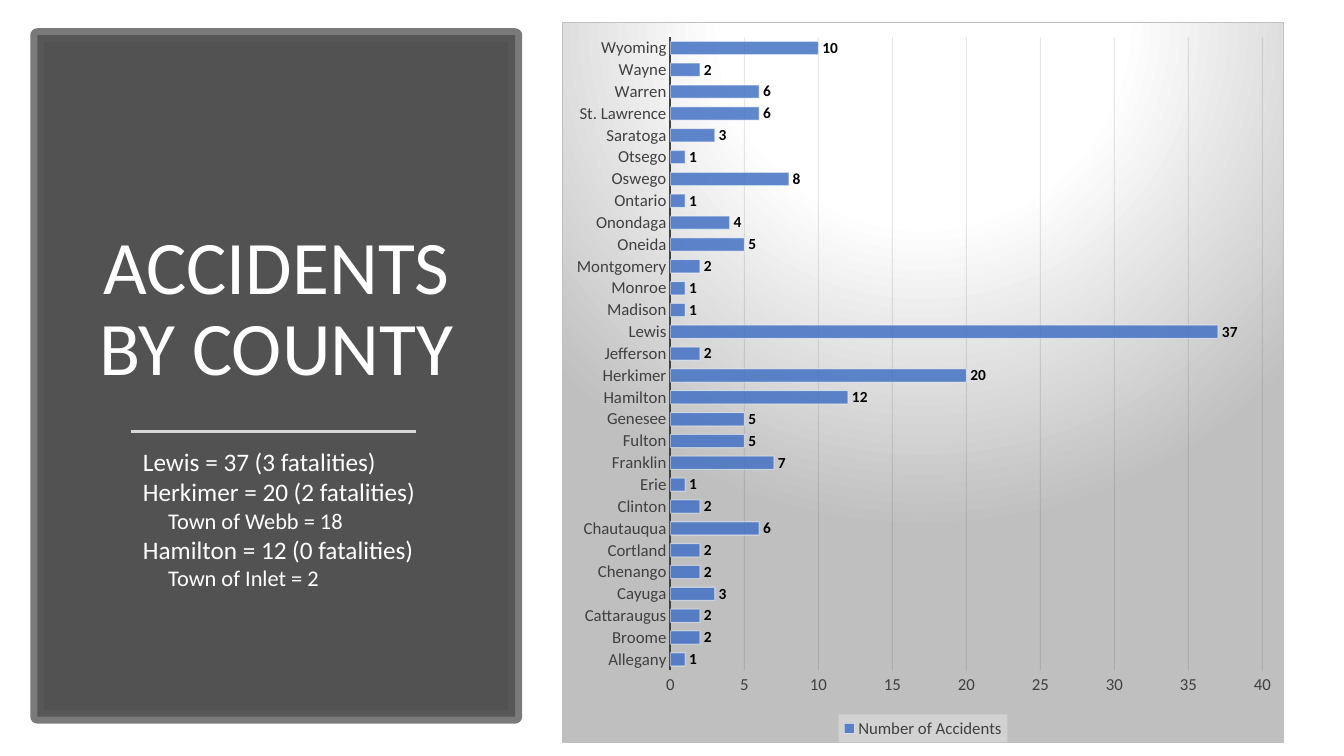
"""Build the slide of accidents by county."""
from dataclasses import dataclass
from typing import Any

from lxml import etree
from pptx import Presentation
from pptx.chart.chart import Chart
from pptx.chart.data import CategoryChartData
from pptx.dml.color import RGBColor
from pptx.enum.chart import XL_CHART_TYPE, XL_LABEL_POSITION, XL_LEGEND_POSITION, XL_TICK_MARK
from pptx.enum.shapes import MSO_CONNECTOR, MSO_SHAPE
from pptx.enum.text import MSO_ANCHOR, PP_ALIGN
from pptx.oxml import parse_xml
from pptx.oxml.ns import nsdecls, qn
from pptx.slide import Slide
from pptx.util import Inches, Pt

BAR_CLUSTERED = XL_CHART_TYPE.BAR_CLUSTERED
OUTSIDE_END = XL_LABEL_POSITION.OUTSIDE_END
LEGEND_BOTTOM = XL_LEGEND_POSITION.BOTTOM
NO_TICK = XL_TICK_MARK.NONE
STRAIGHT = MSO_CONNECTOR.STRAIGHT
RECTANGLE = MSO_SHAPE.RECTANGLE
TOP, BOTTOM = MSO_ANCHOR.TOP, MSO_ANCHOR.BOTTOM
LEFT, CENTER = PP_ALIGN.LEFT, PP_ALIGN.CENTER

WHITE = RGBColor(0xFF, 0xFF, 0xFF)
BLACK = RGBColor(0x00, 0x00, 0x00)
CHARCOAL = RGBColor(0x40, 0x40, 0x40)
PANEL_EDGE = RGBColor(0x59, 0x59, 0x59)
RULE_GRAY = RGBColor(0xD9, 0xD9, 0xD9)
GRID_BLACK = RGBColor(0x0D, 0x0D, 0x0D)
BAR_BLUE = RGBColor(0x44, 0x72, 0xC4)
FONT = "Calibri"

ACCIDENTS = {
    "Allegany": 1, "Broome": 2, "Cattaraugus": 2, "Cayuga": 3, "Chenango": 2,
    "Cortland": 2, "Chautauqua": 6, "Clinton": 2, "Erie": 1, "Franklin": 7,
    "Fulton": 5, "Genesee": 5, "Hamilton": 12, "Herkimer": 20, "Jefferson": 2,
    "Lewis": 37, "Madison": 1, "Monroe": 1, "Montgomery": 2, "Oneida": 5,
    "Onondaga": 4, "Ontario": 1, "Oswego": 8, "Otsego": 1, "Saratoga": 3,
    "St. Lawrence": 6, "Warren": 6, "Wayne": 2, "Wyoming": 10,
}

CHART_BACKGROUND = f"""<c:spPr {nsdecls("c", "a")}>
<a:gradFill><a:gsLst>
<a:gs pos="0"><a:srgbClr val="FFFFFF"/></a:gs>
<a:gs pos="39000"><a:srgbClr val="FFFFFF"/></a:gs>
<a:gs pos="100000"><a:srgbClr val="BFBFBF"/></a:gs>
</a:gsLst><a:path path="circle">
<a:fillToRect l="50000" t="-80000" r="50000" b="180000"/></a:path></a:gradFill>
<a:ln w="9525"><a:solidFill><a:srgbClr val="BFBFBF"/></a:solidFill></a:ln></c:spPr>"""
LEGEND_BACKGROUND = f"""<c:spPr {nsdecls("c", "a")}><a:solidFill>
<a:srgbClr val="F2F2F2"><a:alpha val="39000"/></a:srgbClr></a:solidFill></c:spPr>"""
PLOT_LAYOUT = f"""<c:layout {nsdecls("c")}><c:manualLayout>
<c:layoutTarget val="inner"/><c:xMode val="edge"/><c:yMode val="edge"/>
<c:x val="0.15"/><c:y val="0.02"/><c:w val="0.82"/><c:h val="0.88"/>
</c:manualLayout></c:layout>"""


@dataclass(frozen=True)
class Line:
    text: str
    size: float
    indent: float = 0


@dataclass(frozen=True)
class TextBlock:
    box: tuple[float, float, float, float]
    lines: tuple[Line, ...]
    anchor: MSO_ANCHOR
    alignment: PP_ALIGN
    spacing: float


TEXT_BLOCKS = (
    TextBlock((0.74, 1.63, 4, 2.31), (Line("ACCIDENTS BY COUNTY", 54),), BOTTOM, CENTER, 0.9),
    TextBlock((1.32, 4.38, 2.94, 1.58), (
        Line("Lewis = 37 (3 fatalities)", 18),
        Line("Herkimer = 20 (2 fatalities)", 18),
        Line("Town of Webb = 18", 16, 0.25),
        Line("Hamilton = 12 (0 fatalities)", 18),
        Line("Town of Inlet = 2", 16, 0.25),
    ), TOP, LEFT, 1.0),
)


def apply_format(target: Any, values: dict[str, Any]) -> None:
    """Set each named attribute on the target."""
    for name, value in values.items():
        setattr(target, name, value)


def set_font(font: Any, size: float, color: RGBColor, bold: bool = False) -> None:
    """Set the typeface, size, weight and colour of a font."""
    apply_format(font, {"name": FONT, "size": Pt(size), "bold": bold})
    font.color.rgb = color


def set_line(line: Any, color: RGBColor, width: float) -> None:
    """Give a line a solid colour and a width in points."""
    line.color.rgb = color
    line.width = Pt(width)


def set_opacity(element: Any, path: str, percent: int) -> None:
    """Make the colours found under the path partly transparent."""
    for color in element.xpath(f"{path}/a:solidFill/a:srgbClr"):
        etree.SubElement(color, qn("a:alpha")).set("val", str(percent * 1000))


def add_panel(slide: Slide) -> None:
    """Draw the dark panel and the rule that divides its text."""
    panel = slide.shapes.add_shape(RECTANGLE, *map(Inches, (0.37, 0.35, 4.74, 6.76)))
    panel.shadow.inherit = False
    panel.fill.solid()
    panel.fill.fore_color.rgb = CHARCOAL
    set_line(panel.line, PANEL_EDGE, 10)
    set_opacity(panel.element, "p:spPr", 90)
    set_opacity(panel.element, "p:spPr/a:ln", 80)
    rule = slide.shapes.add_connector(STRAIGHT, *map(Inches, (1.3, 4.28, 4.13, 4.28)))
    set_line(rule.line, RULE_GRAY, 1.75)
    etree.SubElement(rule.element.spPr, qn("a:effectLst"))


def add_text(slide: Slide, block: TextBlock) -> None:
    """Add a text box with one paragraph for each line."""
    shape = slide.shapes.add_textbox(*map(Inches, block.box))
    frame = shape.text_frame
    apply_format(frame, {"word_wrap": True, "vertical_anchor": block.anchor})
    frame.text = "\n".join(line.text for line in block.lines)
    elements = shape.element.xpath(".//a:p")
    for paragraph, element, line in zip(frame.paragraphs, elements, block.lines):
        apply_format(paragraph, {"alignment": block.alignment, "line_spacing": block.spacing})
        set_font(paragraph.runs[0].font, line.size, WHITE)
        if line.indent:
            element.get_or_add_pPr().set("marL", str(Inches(line.indent)))


def style_axes(chart: Chart) -> None:
    """Format both axes and the gridlines."""
    category_axis, value_axis = chart.category_axis, chart.value_axis
    for axis in (category_axis, value_axis):
        apply_format(axis, {"major_tick_mark": NO_TICK, "minor_tick_mark": NO_TICK})
        set_font(axis.tick_labels.font, 12, CHARCOAL)
    set_line(category_axis.format.line, CHARCOAL, 1.5)
    apply_format(value_axis, {"minimum_scale": 0, "maximum_scale": 40, "major_unit": 5})
    value_axis.format.line.fill.background()
    set_line(value_axis.major_gridlines.format.line, GRID_BLACK, 0.75)
    set_opacity(chart.element, ".//c:majorGridlines//a:ln", 10)


def style_bars(chart: Chart) -> None:
    """Format the bars and their value labels."""
    plot = chart.plots[0]
    apply_format(plot, {"gap_width": 65, "vary_by_categories": False})
    series = plot.series[0]
    series.format.fill.solid()
    series.format.fill.fore_color.rgb = BAR_BLUE
    set_line(series.format.line, WHITE, 0.75)
    set_opacity(chart.element, ".//c:ser/c:spPr", 85)
    set_opacity(chart.element, ".//c:ser/c:spPr/a:ln", 50)
    labels = series.data_labels
    apply_format(labels, {"show_value": True, "position": OUTSIDE_END})
    set_font(labels.font, 11, BLACK, bold=True)


def add_accident_chart(slide: Slide) -> None:
    """Add the bar chart of accidents in each county."""
    data = CategoryChartData()
    data.categories = list(ACCIDENTS)
    data.add_series("Number of Accidents", list(ACCIDENTS.values()))
    box = map(Inches, (5.57, 0.22, 7.17, 7.15))
    chart = slide.shapes.add_chart(BAR_CLUSTERED, *box, data).chart
    apply_format(chart, {"has_title": False, "has_legend": True})
    set_font(chart.font, 10, BLACK)
    apply_format(chart.legend, {"position": LEGEND_BOTTOM, "include_in_layout": False})
    set_font(chart.legend.font, 12, CHARCOAL)
    style_axes(chart)
    style_bars(chart)
    root = chart.element
    root.find(qn("c:chart")).addnext(parse_xml(CHART_BACKGROUND))
    root.xpath(".//c:legend/c:txPr")[0].addprevious(parse_xml(LEGEND_BACKGROUND))
    plot_area = root.xpath(".//c:plotArea")[0]
    for layout in plot_area.findall(qn("c:layout")):
        plot_area.remove(layout)
    plot_area.insert(0, parse_xml(PLOT_LAYOUT))


def main() -> None:
    """Build and save the presentation."""
    presentation = Presentation()
    apply_format(presentation, {"slide_width": Inches(13.33), "slide_height": Inches(7.5)})
    slide = presentation.slides.add_slide(presentation.slide_layouts[6])
    add_panel(slide)
    add_accident_chart(slide)
    for block in TEXT_BLOCKS:
        add_text(slide, block)
    presentation.save("out.pptx")


if __name__ == "__main__":
    main()
